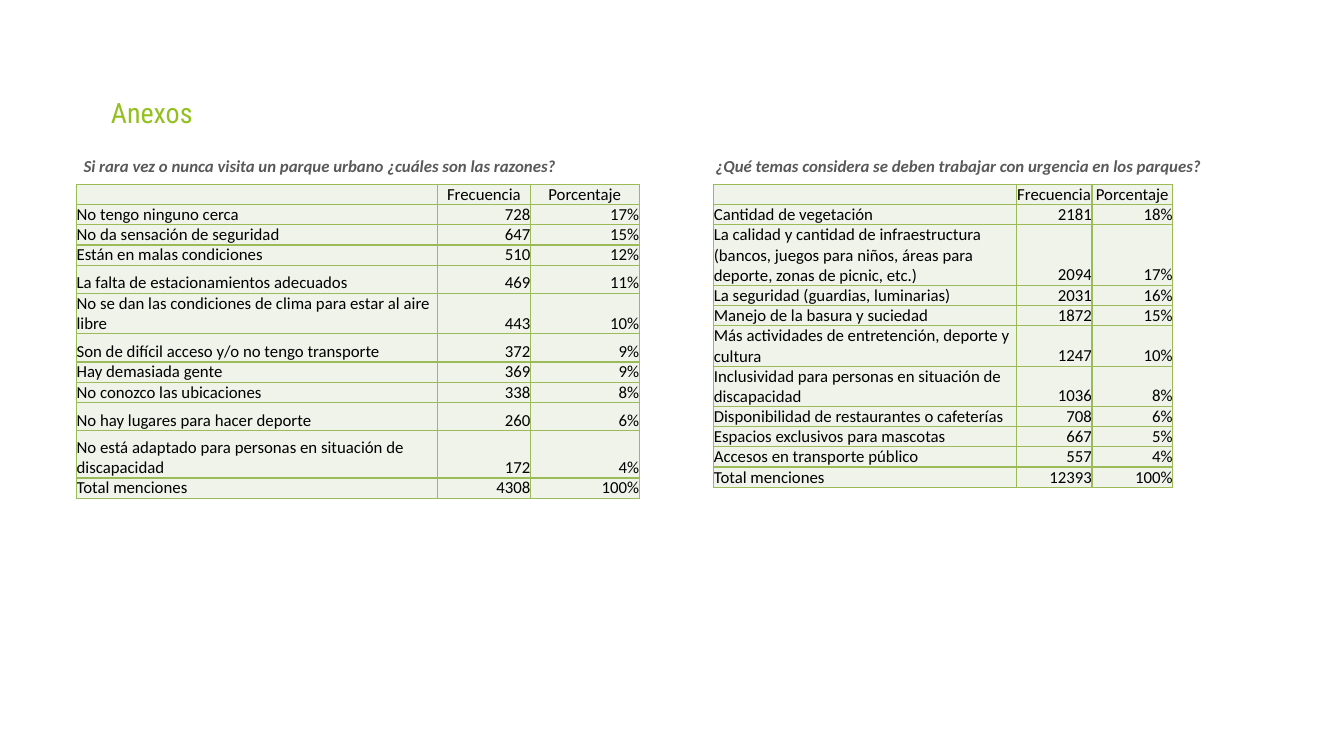
from lxml.etree import SubElement
from pptx import Presentation
from pptx.dml.color import RGBColor
from pptx.enum.text import MSO_ANCHOR, PP_ALIGN
from pptx.oxml.ns import qn
from pptx.util import Inches, Pt

LINE = 0.2
HEADER = ("", "Frecuencia", "Porcentaje")

# Each row: label, mentions, share, row height in inches
visit_reasons = [
    (*HEADER, LINE),
    ("No tengo ninguno cerca", "728", "17%", LINE),
    ("No da sensación de seguridad", "647", "15%", LINE),
    ("Están en malas condiciones", "510", "12%", LINE),
    ("La falta de estacionamientos adecuados", "469", "11%", 0.28),
    ("No se dan las condiciones de clima para estar al aire libre", "443", "10%", 2 * LINE),
    ("Son de difícil acceso y/o no tengo transporte", "372", "9%", 0.28),
    ("Hay demasiada gente", "369", "9%", LINE),
    ("No conozco las ubicaciones", "338", "8%", LINE),
    ("No hay lugares para hacer deporte", "260", "6%", 0.28),
    ("No está adaptado para personas en situación de discapacidad", "172", "4%", 0.47),
    ("Total menciones", "4308", "100%", LINE),
]
urgent_topics = [
    (*HEADER, LINE),
    ("Cantidad de vegetación", "2181", "18%", LINE),
    ("La calidad y cantidad de infraestructura (bancos, juegos para niños, áreas para "
     "deporte, zonas de picnic, etc.)", "2094", "17%", 3 * LINE),
    ("La seguridad (guardias, luminarias)", "2031", "16%", LINE),
    ("Manejo de la basura y suciedad", "1872", "15%", LINE),
    ("Más actividades de entretención, deporte y cultura", "1247", "10%", 2 * LINE),
    ("Inclusividad para personas en situación de discapacidad", "1036", "8%", 2 * LINE),
    ("Disponibilidad de restaurantes o cafeterías", "708", "6%", LINE),
    ("Espacios exclusivos para mascotas", "667", "5%", LINE),
    ("Accesos en transporte público", "557", "4%", LINE),
    ("Total menciones", "12393", "100%", LINE),
]

# Each survey: question, question left, table left, column widths, rows
surveys = [
    ("Si rara vez o nunca visita un parque urbano ¿cuáles son las razones?",
     0.73, 0.76, (3.58, 0.92, 1.08), visit_reasons),
    ("¿Qué temas considera se deben trabajar con urgencia en los parques?",
     7, 7.08, (3, 0.75, 0.8), urgent_topics),
]


def style_font(font, name, size, color):
    font.name = name
    font.size = Pt(size)
    font.color.rgb = RGBColor.from_string(color)


def draw_borders(cell, color):
    properties = cell._tc.get_or_add_tcPr()
    for side in ("lnL", "lnR", "lnT", "lnB"):
        border = SubElement(properties, qn(f"a:{side}"), w=str(Pt(1)))
        solid = SubElement(border, qn("a:solidFill"))
        SubElement(solid, qn("a:srgbClr"), val=color)


presentation = Presentation()
presentation.slide_width = Inches(13.33)
presentation.slide_height = Inches(7.5)
slide = presentation.slides.add_slide(presentation.slide_layouts[6])

title = slide.shapes.add_textbox(Inches(1.1), Inches(0.95), Inches(11.47), Inches(0.34)).text_frame
title.word_wrap = True
title.margin_left = title.margin_right = title.margin_top = title.margin_bottom = 0
title.text = "Anexos"
style_font(title.paragraphs[0].runs[0].font, "Roboto Condensed", 20, "93C01F")

for question, question_left, table_left, widths, rows in surveys:
    heading = slide.shapes.add_textbox(
        Inches(question_left), Inches(1.5), Inches(5.35), Inches(0.3)).text_frame
    heading.word_wrap = True
    heading.text = question
    heading_font = heading.paragraphs[0].runs[0].font
    style_font(heading_font, "Calibri", 12, "595959")
    heading_font.bold = heading_font.italic = True

    table = slide.shapes.add_table(
        len(rows), len(widths), Inches(table_left), Inches(1.83),
        Inches(sum(widths)), Inches(sum(row[-1] for row in rows))).table
    table.first_row = table.horz_banding = False
    for column, width in zip(table.columns, widths):
        column.width = Inches(width)

    for row_index, (*values, height) in enumerate(rows):
        table.rows[row_index].height = Inches(height)
        for column_index, value in enumerate(values):
            cell = table.cell(row_index, column_index)
            draw_borders(cell, "9BBB59")
            cell.fill.solid()
            cell.fill.fore_color.rgb = RGBColor.from_string("EFF3EA")
            cell.margin_left = cell.margin_right = cell.margin_top = cell.margin_bottom = 0
            cell.vertical_anchor = MSO_ANCHOR.BOTTOM
            paragraph = cell.text_frame.paragraphs[0]
            if not value:
                # Keeps the empty header cell from stretching its row
                SubElement(paragraph._p, qn("a:endParaRPr"), sz="1200")
                continue
            paragraph.text = value
            style_font(paragraph.runs[0].font, "Calibri", 12, "000000")
            if row_index == 0:
                paragraph.alignment = PP_ALIGN.CENTER
            elif column_index > 0:
                paragraph.alignment = PP_ALIGN.RIGHT

presentation.save("out.pptx")
